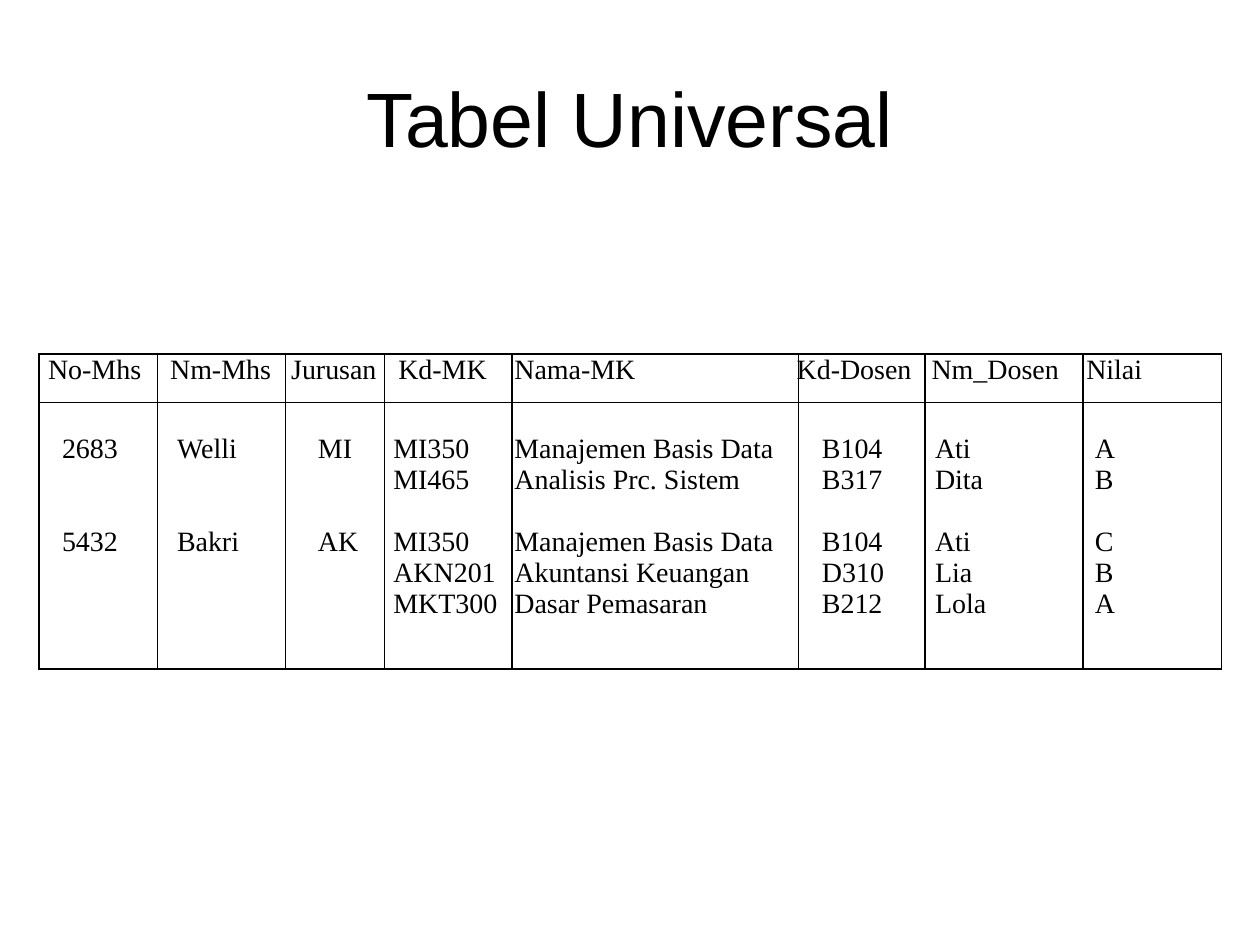
from lxml import etree
from pptx import Presentation, util as u
from pptx.dml.color import RGBColor
from pptx.enum import shapes, text
from pptx.oxml.ns import qn

INK = "000000"
HEADER = ["No-Mhs", "Nm-Mhs", "Jurusan", "Kd-MK", "Nama-MK", "Kd-Dosen", "Nm_Dosen", "Nilai"]
STUDENTS = [
    ("2683", "Welli", "MI", [
        ("MI350", "Manajemen Basis Data", "B104", "Ati", "A"),
        ("MI465", "Analisis Prc. Sistem", "B317", "Dita", "B")]),
    ("5432", "Bakri", "AK", [
        ("MI350", "Manajemen Basis Data", "B104", "Ati", "C"),
        ("AKN201", "Akuntansi Keuangan", "D310", "Lia", "B"),
        ("MKT300", "Dasar Pemasaran", "B212", "Lola", "A")]),
]
# Distances in cm: tab stops from the cell text edge, rules from the table edge
HEADER_TABS = [2.46, 4.9, 7.06, 9.4, 15.09, 17.81, 20.93]
BODY_TABS = [0.28, 2.6, 5.44, 6.96, 9.4, 15.6, 17.88, 21.1]
COLUMN_RULES = [2.38, 4.96, 6.96, 9.53, 15.3, 17.86, 21.04]
ROW_HEIGHTS = [0.97, 5.38]


def color(value):
    return RGBColor.from_string(value)


def style_text(para, font, size):
    for span in para.runs:
        span.font.name = font
        span.font.size = u.Pt(size)
        span.font.bold = False
        span.font.color.rgb = color(INK)


def set_tabs(para, stops):
    tab_list = etree.SubElement(para._p.get_or_add_pPr(), qn("a:tabLst"))
    for stop in stops:
        etree.SubElement(tab_list, qn("a:tab"), pos=str(int(u.Cm(stop))), algn="l")


def border_cell(cell):
    properties = cell._tc.get_or_add_tcPr()
    for side in ("lnL", "lnR", "lnT", "lnB"):
        line = etree.SubElement(properties, qn("a:" + side), w=str(int(u.Pt(1))))
        fill = etree.SubElement(line, qn("a:solidFill"))
        etree.SubElement(fill, qn("a:srgbClr"), val=INK)
    cell.fill.background()


def fill_line(para, values, stops):
    para.text = "\t".join(values)
    set_tabs(para, stops)
    style_text(para, "Times New Roman", 16)


def fill_body(frame):
    """Write one line per course, with the student's details on the first."""
    para = frame.paragraphs[0]
    for index, (number, name, major, courses) in enumerate(STUDENTS):
        for row, course in enumerate(courses):
            if index or row:
                para = frame.add_paragraph()
            if index and not row:
                para.space_before = u.Pt(17.7)
            student = (number, name, major) if row == 0 else ("", "", "")
            fill_line(para, ("", *student, *course), BODY_TABS)


def add_title(page, left, top, width, height):
    box = page.shapes.add_textbox(u.Cm(left), u.Cm(top), u.Cm(width), u.Cm(height))
    frame = box.text_frame
    frame.word_wrap = True
    frame.vertical_anchor = text.MSO_ANCHOR.MIDDLE
    frame.text = "Tabel Universal"
    para = frame.paragraphs[0]
    para.alignment = text.PP_ALIGN.CENTER
    style_text(para, "Arial", 44)


def add_column_rule(page, x, top, height):
    rule = page.shapes.add_connector(
        shapes.MSO_CONNECTOR.STRAIGHT, u.Cm(x), u.Cm(top), u.Cm(x), u.Cm(top + height))
    rule.line.color.rgb = color(INK)
    rule.line.width = u.Pt(0.75)
    etree.SubElement(rule._element.spPr, qn("a:effectLst"))


def add_universal_table(page, left, top, width):
    height = sum(ROW_HEIGHTS)
    table = page.shapes.add_table(
        2, 1, u.Cm(left), u.Cm(top), u.Cm(width), u.Cm(height)).table
    table.first_row = table.horz_banding = False
    for row, row_height in zip(table.rows, ROW_HEIGHTS):
        row.height = u.Cm(row_height)
    for cell in table.iter_cells():
        cell.margin_left = cell.margin_right = u.Cm(0.18)
        cell.margin_top = cell.margin_bottom = 0
        border_cell(cell)
    header, body = table.iter_cells()
    fill_line(header.text_frame.paragraphs[0], HEADER, HEADER_TABS)
    body.margin_top = u.Cm(0.62)
    fill_body(body.text_frame)
    for offset in COLUMN_RULES:
        add_column_rule(page, left + offset, top, height)


def main():
    deck = Presentation()
    deck.slide_width, deck.slide_height = u.Cm(25.4), u.Cm(19.05)
    page = deck.slides.add_slide(deck.slide_layouts[6])
    add_title(page, 1.27, 0.76, 22.86, 3.18)
    add_universal_table(page, 0.79, 7.14, 23.83)
    deck.save("out.pptx")


if __name__ == "__main__":
    main()
